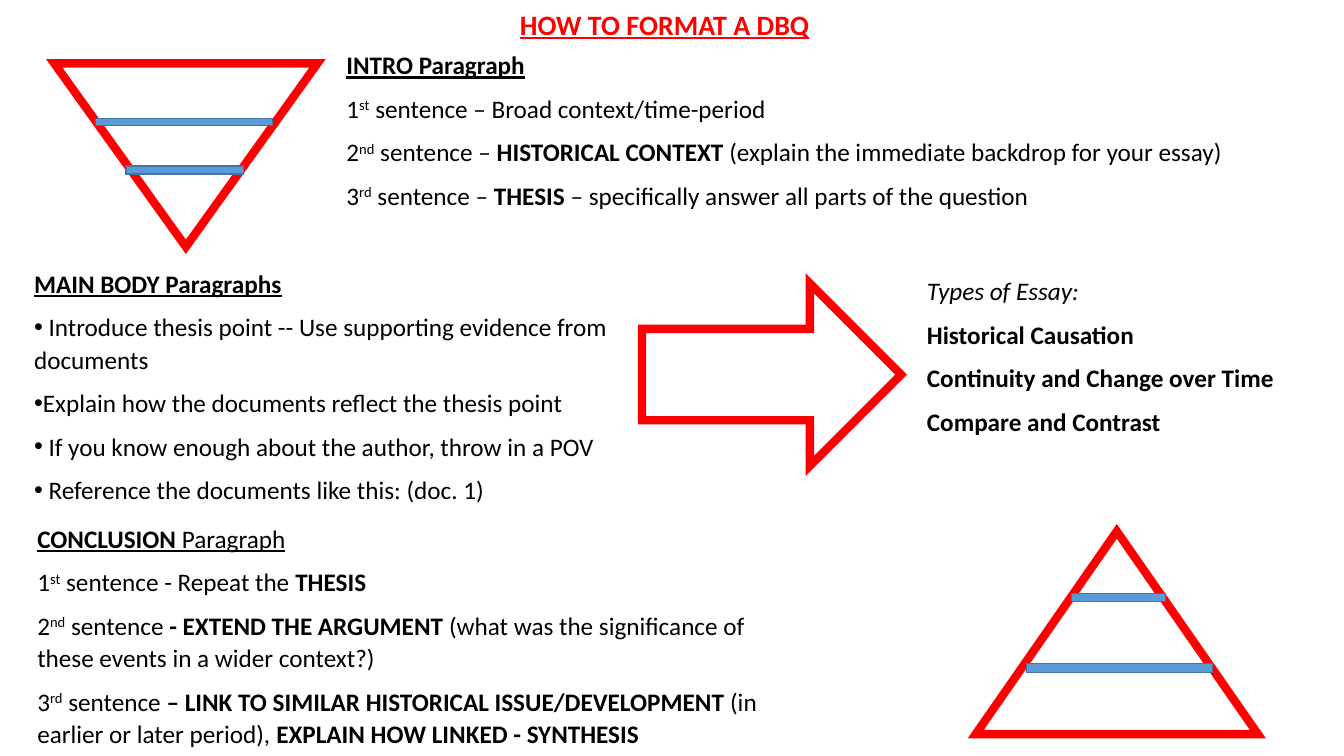
from dataclasses import dataclass

from lxml import etree
from pptx import Presentation
from pptx import util as u
from pptx.dml.color import RGBColor
from pptx.enum import shapes, text
from pptx.oxml import ns


@dataclass(frozen=True)
class Theme:
    font: str = "Calibri"
    title_size: int = 20
    body_size: int = 18
    ink: str = "000000"
    paper: str = "FFFFFF"
    red: str = "FF0000"
    blue: str = "5B9BD5"
    blue_edge: str = "43739E"
    outline: int = 6
    bar_line: int = 1


T = Theme()
KIND = shapes.MSO_SHAPE


def rgb(value):
    return RGBColor.from_string(value)


def add_shape(s, kind, box, fill, line, weight):
    sp = s.shapes.add_shape(kind, *map(u.Cm, box))
    sp.shadow.inherit = False
    sp.fill.solid()
    sp.fill.fore_color.rgb = rgb(fill)
    sp.line.color.rgb = rgb(line)
    sp.line.width = u.Pt(weight)
    # Sharp corners on the outline
    ln = sp.line._get_or_add_ln()
    etree.SubElement(ln, ns.qn("a:miter"), lim="800000")
    return sp


def style_run(r, marks, size, color):
    """Marks: b bold, i italic, u underline, ^ superscript."""
    f = r.font
    f.name, f.size, f.color.rgb = T.font, u.Pt(size), rgb(color)
    f.bold, f.italic, f.underline = "b" in marks, "i" in marks, "u" in marks
    if "^" in marks:
        r._r.get_or_add_rPr().set("baseline", "30000")


def add_bullet(p):
    pPr = p._p.get_or_add_pPr()
    pPr.set("marL", "0")
    pPr.set("indent", "0")
    etree.SubElement(pPr, ns.qn("a:buFont"), typeface="Arial")
    etree.SubElement(pPr, ns.qn("a:buChar"), char="•")


def text_block(s, box, paragraphs, size=T.body_size, color=T.ink,
               align=text.PP_ALIGN.LEFT, bullets=False):
    """Each paragraph is a list of (words, marks); bullets skip the heading."""
    tf = s.shapes.add_textbox(*map(u.Cm, box)).text_frame
    tf.word_wrap = True
    tf.auto_size = text.MSO_AUTO_SIZE.SHAPE_TO_FIT_TEXT
    for i, parts in enumerate(paragraphs):
        p = tf.add_paragraph() if i else tf.paragraphs[0]
        p.alignment = align
        p.line_spacing = 1.07
        p.space_after = u.Pt(8)
        if bullets and i:
            add_bullet(p)
        for words, marks in parts:
            r = p.add_run()
            r.text = words
            style_run(r, marks, size, color)


def sentence(number, suffix, *parts):
    return [(number, ""), (suffix, "^"), *parts]


def banded_triangle(s, box, kind, bars):
    """Red triangle with blue bars placed from its top left corner."""
    left, top = box[:2]
    add_shape(s, kind, box, T.paper, T.red, T.outline)
    for x, y, w, h in bars:
        add_shape(s, KIND.MATH_MINUS, (left + x, top + y, w, h),
                  T.blue, T.blue_edge, T.bar_line)


def title(s, box):
    text_block(s, box, [[("HOW TO FORMAT A DBQ", "bu")]], T.title_size, T.red,
               text.PP_ALIGN.CENTER)


def intro(s, box):
    left, top = box[:2]
    banded_triangle(s, (left, top + 0.53, 6.63, 4.62), KIND.FLOWCHART_MERGE,
                    [(1.27, 2.24, 4.04, 0.89), (0.23, 1.09, 6.07, 0.76)])
    text_block(s, (left + 7.11, top, box[2] - 7.11, 4.39), [
        [("INTRO Paragraph", "bu")],
        sentence("1", "st", (" sentence – Broad context/time-period", "")),
        sentence("2", "nd", (" sentence – ", ""), ("HISTORICAL CONTEXT", "b"),
                 (" (explain the immediate backdrop for your essay)", "")),
        sentence("3", "rd", (" sentence – ", ""), ("THESIS", "b"),
                 (" – specifically answer all parts of the question", "")),
    ])


def main_body(s, box):
    left, top = box[:2]
    text_block(s, (left, top, 15.98, 6.32), [
        [("MAIN BODY Paragraphs", "bu")],
        [(" Introduce thesis point -- Use supporting evidence from documents", "")],
        [("Explain how the documents reflect the thesis point", "")],
        [(" If you know enough about the author, throw in a POV", "")],
        [(" Reference the documents like this: (doc. 1)", "")],
    ], bullets=True)
    # Arrow to the essay types
    add_shape(s, KIND.RIGHT_ARROW, (left + 15.57, top + 0.56, 6.53, 4.6),
              T.paper, T.red, T.outline)
    text_block(s, (left + 22.5, top + 0.18, box[2] - 22.5, 4.39), [
        [("Types of Essay:", "i")],
        [("Historical Causation", "b")],
        [("Continuity and Change over Time", "b")],
        [("Compare and Contrast", "b")],
    ])


def conclusion(s, box):
    left, top = box[:2]
    banded_triangle(s, (left + 23.9, top + 0.39, 7.11, 5.11),
                    KIND.FLOWCHART_EXTRACT,
                    [(0.43, 2.97, 6.38, 0.94), (1.98, 1.22, 3.23, 0.89)])
    text_block(s, (left, top, 19.81, box[3]), [
        [("CONCLUSION", "bu"), (" Paragraph", "u")],
        sentence("1", "st", (" sentence - Repeat the ", ""), ("THESIS", "b")),
        sentence("2", "nd", (" sentence ", ""), ("- EXTEND THE ARGUMENT ", "b"),
                 ("(what was the significance of these events in a wider context?)", "")),
        sentence("3", "rd", (" sentence ", ""),
                 ("– LINK TO SIMILAR HISTORICAL ISSUE/DEVELOPMENT ", "b"),
                 ("(in earlier or later period), ", ""),
                 ("EXPLAIN HOW LINKED - SYNTHESIS", "b")),
    ])


def main():
    prs = Presentation()
    prs.slide_width, prs.slide_height = u.Cm(33.87), u.Cm(19.05)
    s = prs.slides.add_slide(prs.slide_layouts[6])
    intro(s, (1.37, 1.07, 30.88, 5.15))
    main_body(s, (0.61, 6.58, 31.97, 6.32))
    conclusion(s, (0.69, 13, 31.01, 6.05))
    title(s, (5.79, 0, 21.92, 1.17))
    prs.save("out.pptx")


if __name__ == "__main__":
    main()
